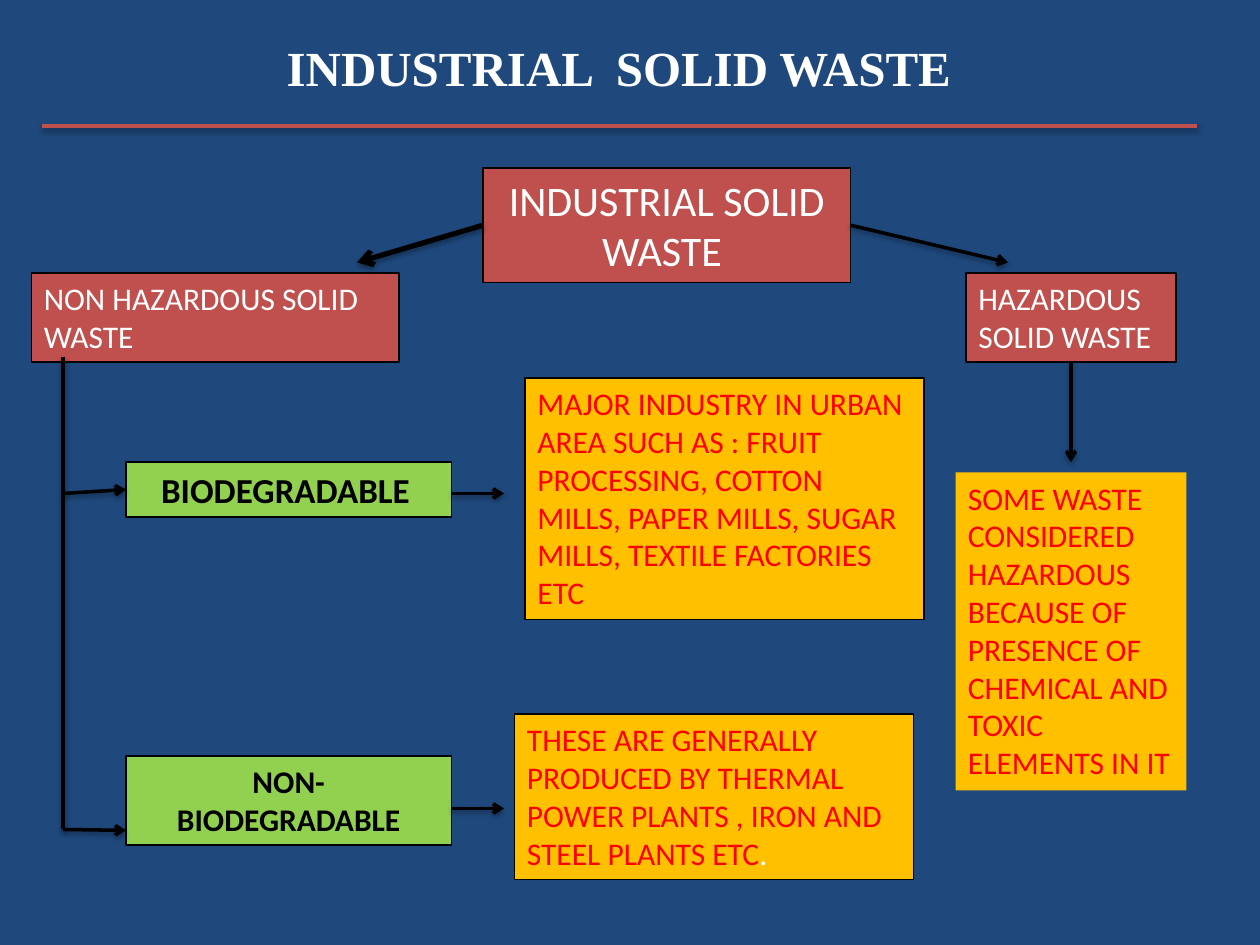
from pptx import Presentation, util as u
from pptx.dml.color import RGBColor
from pptx.enum import shapes, text
from pptx.oxml import parse_xml
from pptx.oxml.ns import nsdecls

HUE = {"navy": "1F497D", "brick": "C0504D", "lime": "92D050",
       "gold": "FFC000", "red": "FF0000", "white": "FFFFFF", "black": "000000"}
TOP, LEFT, BOTTOM, RIGHT = range(4)
MID = text.PP_ALIGN.CENTER
SHADE = ('<a:effectLst %s><a:outerShdw blurRad="%d" dist="%d" dir="5400000" '
         'rotWithShape="0"><a:srgbClr val="%s"><a:alpha val="%d"/></a:srgbClr>'
         '</a:outerShdw></a:effectLst>')


def rgb(name):
    return RGBColor.from_string(HUE[name])


class Deck:
    """Style and current slide."""
    font = "Calibri"

    def __init__(self, wide, high):
        self.prs = Presentation()
        self.prs.slide_width, self.prs.slide_height = u.Pt(wide), u.Pt(high)
        self.slide = self.prs.slides.add_slide(self.prs.slide_layouts[6])
        self.paint(self.slide.background.fill, "navy")

    def paint(self, fill, hue):
        fill.solid()
        fill.fore_color.rgb = rgb(hue)

    def words(self, frame, runs, align):
        """Each run is (wording, hue, format values)."""
        for key, val in {"word_wrap": True,
                         "vertical_anchor": text.MSO_ANCHOR.TOP}.items():
            setattr(frame, key, val)
        para = frame.paragraphs[0]
        para.alignment = align
        for wording, hue, form in runs:
            run = para.add_run()
            run.text = wording
            base = {"name": self.font, "size": u.Pt(18), "bold": False}
            for key, val in {**base, **form}.items():
                setattr(run.font, key, val)
            run.font.color.rgb = rgb(hue)

    def label(self, area, runs, align=MID):
        box = self.slide.shapes.add_textbox(*map(u.Pt, area))
        self.words(box.text_frame, runs, align)

    def box(self, area, hue, runs, align=text.PP_ALIGN.LEFT, edge=True):
        rect = self.slide.shapes.add_shape(
            shapes.MSO_SHAPE.RECTANGLE, *map(u.Pt, area))
        rect.shadow.inherit = False
        self.paint(rect.fill, hue)
        if edge:
            self.paint(rect.line.fill, "black")
            rect.line.width = u.Pt(0.75)
        else:
            rect.line.fill.background()
        self.words(rect.text_frame, runs, align)
        return rect

    def line(self, ends, hue="black", width=2, head=True, start=None,
             stop=None, shade=(3.1, 1.6, 38)):
        """start and stop are (box, side) joins."""
        link = self.slide.shapes.add_connector(
            shapes.MSO_CONNECTOR.STRAIGHT, *map(u.Pt, ends))
        link.line.width = u.Pt(width)
        link.line.color.rgb = rgb(hue)
        if head:
            link.line._get_or_add_ln().append(
                parse_xml('<a:tailEnd %s type="arrow"/>' % nsdecls("a")))
        blur, dist, alpha = shade
        link._element.spPr.append(parse_xml(SHADE % (
            nsdecls("a"), u.Pt(blur), u.Pt(dist), HUE["black"], alpha * 1000)))
        if start:
            link.begin_connect(*start)
        if stop:
            link.end_connect(*stop)


def main():
    deck = Deck(720, 540)
    bold = {"bold": True}

    # Title and rule
    deck.label((24, 18, 666, 41), [
        ("INDUSTRIAL  SOLID WASTE ", "white",
         {"name": "Times New Roman", "size": u.Pt(28), **bold})])
    deck.line((24, 72, 684, 72), "brick", head=False)

    # Waste classes
    root = deck.box((276, 96, 210, 65.4), "brick", [
        ("INDUSTRIAL SOLID WASTE ", "white", {"size": u.Pt(24)})], MID)
    deck.box((18, 156, 210, 50.9), "brick",
             [("NON HAZARDOUS SOLID WASTE", "white", {})])
    hazard = deck.box((552, 156, 120, 50.9), "brick",
                      [("HAZARDOUS SOLID WASTE", "white", {})])

    # Kinds of non hazardous waste
    bio = deck.box((72, 264, 186, 31.5), "lime", [
        ("BIODEGRADABLE", "black", {"size": u.Pt(20), **bold}),
        (" ", "white", {"size": u.Pt(16)})], MID)
    deck.box((72, 432, 186, 50.9), "lime",
             [("NON- BIODEGRADABLE", "black", bold)], MID)

    # Examples
    deck.box((300, 216, 228, 138.1), "gold", [
        ("MAJOR INDUSTRY IN URBAN AREA SUCH AS : FRUIT PROCESSING, COTTON "
         "MILLS, PAPER MILLS, SUGAR MILLS, TEXTILE FACTORIES ETC", "red", {})])
    deck.box((294, 408, 228, 94.5), "gold", [
        ("THESE ARE GENERALLY PRODUCED BY THERMAL POWER PLANTS , IRON AND "
         "STEEL PLANTS ETC", "red", {}), (".", "white", {})])
    deck.box((546, 270, 132, 181.7), "gold", [
        ("SOME WASTE CONSIDERED HAZARDOUS BECAUSE OF PRESENCE OF CHEMICAL "
         "AND TOXIC ELEMENTS IN IT", "red", {})], edge=False)

    # Arrows from the classes
    deck.line((276, 128.7, 204, 150), width=3, start=(root, LEFT),
              shade=(3.1, 1.8, 35))
    deck.line((486, 128.7, 576, 150), start=(root, RIGHT))
    deck.line((612, 206.9, 612, 264), start=(hazard, BOTTOM))

    # Arrows to the examples
    for y in (282, 462):
        deck.line((258, y, 288, y))

    # Trunk and branches
    deck.line((36, 204, 36, 474), head=False)
    deck.line((36, 282, 72, 279.75), stop=(bio, LEFT))
    deck.line((36, 474, 72, 474.5))

    deck.prs.save("out.pptx")


if __name__ == "__main__":
    main()
